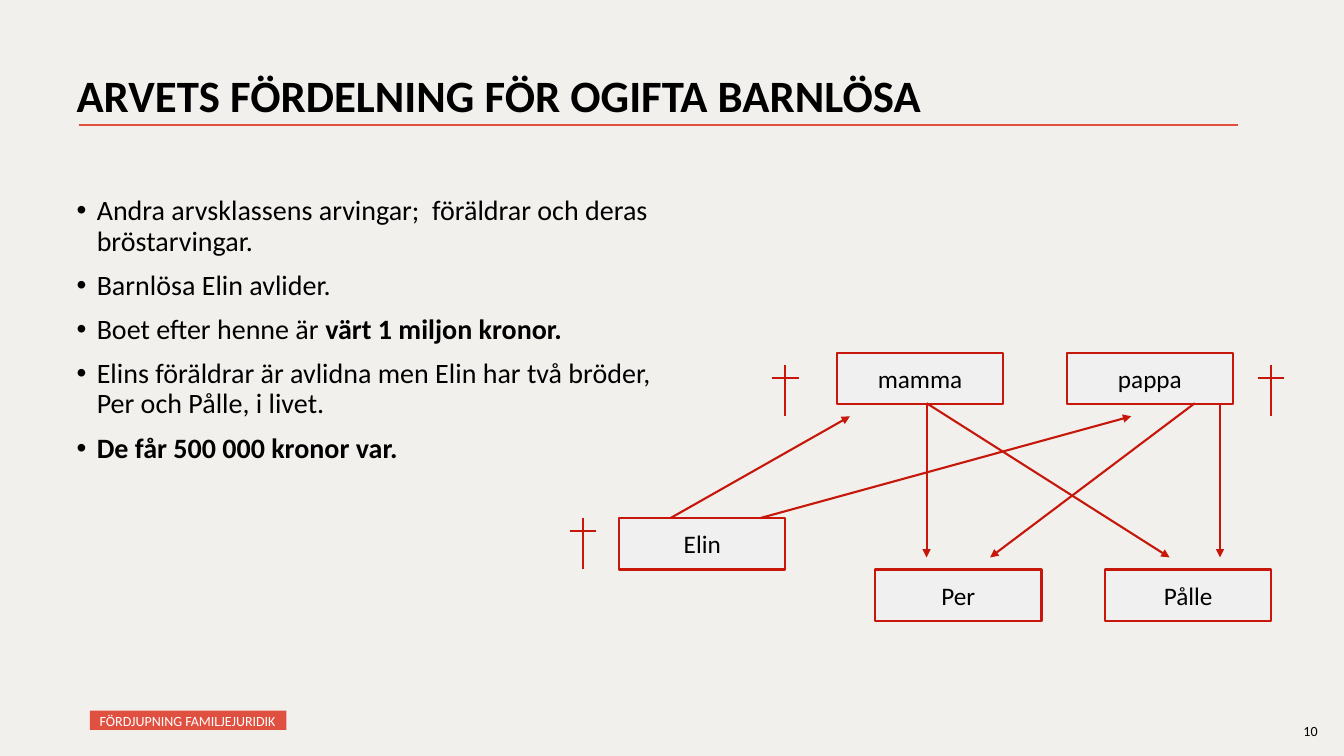
"""Builds a slide on how an inheritance is shared when the deceased is unmarried and childless."""
from dataclasses import dataclass

from lxml import etree
from pptx import Presentation
from pptx.dml.color import RGBColor
from pptx.enum.shapes import MSO_CONNECTOR, MSO_SHAPE
from pptx.enum.text import MSO_ANCHOR, MSO_AUTO_SIZE, PP_ALIGN
from pptx.oxml.ns import qn
from pptx.util import Inches, Pt

TOP, MIDDLE = MSO_ANCHOR.TOP, MSO_ANCHOR.MIDDLE
LEFT, CENTER = PP_ALIGN.LEFT, PP_ALIGN.CENTER
NO_FIT = MSO_AUTO_SIZE.NONE
RECTANGLE, STRAIGHT = MSO_SHAPE.RECTANGLE, MSO_CONNECTOR.STRAIGHT

BACKGROUND, BLACK, WHITE = "F1F0EC", "000000", "FFFFFF"
ACCENT, TREE_RED, PERSON_GREY = "E05040", "C7170A", "F0F0F0"
FONT = "Calibri"
LINE_WIDTH = 1.5
PERSON_WIDTH, PERSON_HEIGHT = 1.65, 0.51
CROSS_HALF_WIDTH, CROSS_HEIGHT, CROSS_BAR_DROP = 0.13, 0.51, 0.13


@dataclass(frozen=True)
class Person:
    """A named box in the family tree."""
    name: str
    left: float
    top: float


@dataclass(frozen=True)
class Line:
    """A straight line between two points."""
    x1: float
    y1: float
    x2: float
    y2: float


@dataclass(frozen=True)
class Cross:
    """A mark for a deceased person, placed by its top end."""
    x: float
    top: float


PARENT_TOP, ELIN_TOP, BROTHER_TOP = 3.5, 5.14, 5.65
PEOPLE = [
    Person("mamma", 8.3, PARENT_TOP),
    Person("pappa", 10.58, PARENT_TOP),
    Person("Elin", 6.14, ELIN_TOP),
    Person("Pålle", 10.96, BROTHER_TOP),
    Person("Per", 8.68, BROTHER_TOP),
]
INHERITANCE = [
    Line(6.65, ELIN_TOP, 8.43, 4.13),
    Line(7.54, ELIN_TOP, 11.22, 4.13),
    Line(9.19, 4, 9.19, 5.53),
    Line(9.19, 4, 11.6, 5.53),
    Line(12.1, 4, 12.1, 5.53),
    Line(11.85, 4, 9.82, 5.53),
]
CROSSES = [Cross(7.79, 3.62), Cross(12.61, 3.62), Cross(5.78, ELIN_TOP)]

FACTS = [
    [("Andra arvsklassens arvingar;  föräldrar och deras bröstarvingar.", False)],
    [("Barnlösa Elin avlider.", False)],
    [("Boet efter henne är ", False), ("värt 1 miljon kronor.", True)],
    [("Elins föräldrar är avlidna men Elin har två bröder, Per och Pålle, i livet.", False)],
    [("De får 500 000 kronor var.", True)],
]


def rgb(value: str) -> RGBColor:
    """Turn a hex string into a colour."""
    return RGBColor.from_string(value)


def place(shape, left: float, top: float, width: float, height: float) -> None:
    """Move and size a shape."""
    shape.left, shape.top = Inches(left), Inches(top)
    shape.width, shape.height = Inches(width), Inches(height)


def add_bullet(paragraph) -> None:
    """Give a paragraph a hanging bullet."""
    properties = paragraph._p.get_or_add_pPr()
    properties.set("marL", str(Inches(0.2)))
    properties.set("indent", str(Inches(-0.2)))
    etree.SubElement(properties, qn("a:buFont"), typeface="Arial")
    etree.SubElement(properties, qn("a:buChar"), char="•")


def write(shape, paragraphs, *, size: float, color: str = BLACK, align=LEFT, anchor=TOP,
          insets=(0.1, 0.05, 0.1, 0.05), wrap: bool = True, spacing: float = 1.0,
          gap: float = 0, bullets: bool = False) -> None:
    """Fill a shape with paragraphs of (text, bold) runs."""
    frame = shape.text_frame
    frame.auto_size, frame.word_wrap, frame.vertical_anchor = NO_FIT, wrap, anchor
    (frame.margin_left, frame.margin_top,
     frame.margin_right, frame.margin_bottom) = map(Inches, insets)
    for index, runs in enumerate(paragraphs):
        paragraph = frame.add_paragraph() if index else frame.paragraphs[0]
        if bullets:
            add_bullet(paragraph)
        paragraph.alignment, paragraph.line_spacing = align, spacing
        paragraph.space_before = Pt(gap if index else 0)
        for text, bold in runs:
            run = paragraph.add_run()
            run.text = text
            run.font.name, run.font.size, run.font.bold = FONT, Pt(size), bold
            run.font.color.rgb = rgb(color)


def add_box(slide, left: float, top: float, width: float, height: float, fill: str,
            outline: str = ""):
    """Add a flat rectangle, outlined when a colour is given."""
    box = slide.shapes.add_shape(RECTANGLE, Inches(left), Inches(top),
                                 Inches(width), Inches(height))
    box.shadow.inherit = False
    box.fill.solid()
    box.fill.fore_color.rgb = rgb(fill)
    if outline:
        box.line.color.rgb = rgb(outline)
        box.line.width = Pt(LINE_WIDTH)
    else:
        box.line.fill.background()
    return box


def draw_line(slide, line: Line, color: str = TREE_RED, arrow: bool = False) -> None:
    """Draw a line, with an arrowhead at its end if asked."""
    connector = slide.shapes.add_connector(STRAIGHT, Inches(line.x1), Inches(line.y1),
                                           Inches(line.x2), Inches(line.y2))
    connector.line.color.rgb = rgb(color)
    connector.line.width = Pt(LINE_WIDTH)
    properties = connector._element.spPr
    if arrow:
        etree.SubElement(properties.find(qn("a:ln")), qn("a:tailEnd"), type="triangle")
    etree.SubElement(properties, qn("a:effectLst"))


def draw_person(slide, person: Person) -> None:
    """Draw one box of the family tree."""
    box = add_box(slide, person.left, person.top, PERSON_WIDTH, PERSON_HEIGHT,
                  PERSON_GREY, TREE_RED)
    write(box, [[(person.name, False)]], size=18, align=CENTER, anchor=MIDDLE,
          insets=(0.04,) * 4, wrap=False)


def draw_cross(slide, cross: Cross) -> None:
    """Draw the upright and the bar of a cross."""
    bar = cross.top + CROSS_BAR_DROP
    draw_line(slide, Line(cross.x, cross.top, cross.x, cross.top + CROSS_HEIGHT))
    draw_line(slide, Line(cross.x - CROSS_HALF_WIDTH, bar, cross.x + CROSS_HALF_WIDTH, bar))


def main() -> None:
    """Build and save the slide."""
    deck = Presentation()
    deck.slide_width, deck.slide_height = Inches(13.33), Inches(7.5)
    slide = deck.slides.add_slide(deck.slide_layouts[1])
    slide.background.fill.solid()
    slide.background.fill.fore_color.rgb = rgb(BACKGROUND)

    title, facts = slide.shapes.title, slide.placeholders[1]
    place(title, 0.66, 0.68, 11.5, 1.45)
    write(title, [[("ARVETS FÖRDELNING FÖR OGIFTA BARNLÖSA", True)]], size=32, spacing=0.9)
    place(facts, 0.66, 1.9, 6.18, 4.76)
    write(facts, FACTS, size=20, spacing=0.9, gap=10, bullets=True)

    draw_line(slide, Line(0.78, 1.24, 12.28, 1.24), ACCENT)
    course_tag = add_box(slide, 0.89, 7.05, 1.95, 0.19, ACCENT)
    write(course_tag, [[("FÖRDJUPNING FAMILJEJURIDIK", False)]], size=10, color=WHITE,
          anchor=MIDDLE, insets=(0.1, 0.08, 0.04, 0.05), wrap=False, spacing=0.9)
    page_number = slide.shapes.add_textbox(Inches(12.83), Inches(7.12), Inches(0.4), Inches(0.27))
    write(page_number, [[("10", False)]], size=10)

    for person in PEOPLE:
        draw_person(slide, person)
    for line in INHERITANCE:
        draw_line(slide, line, arrow=True)
    for cross in CROSSES:
        draw_cross(slide, cross)
    deck.save("out.pptx")


if __name__ == "__main__":
    main()
